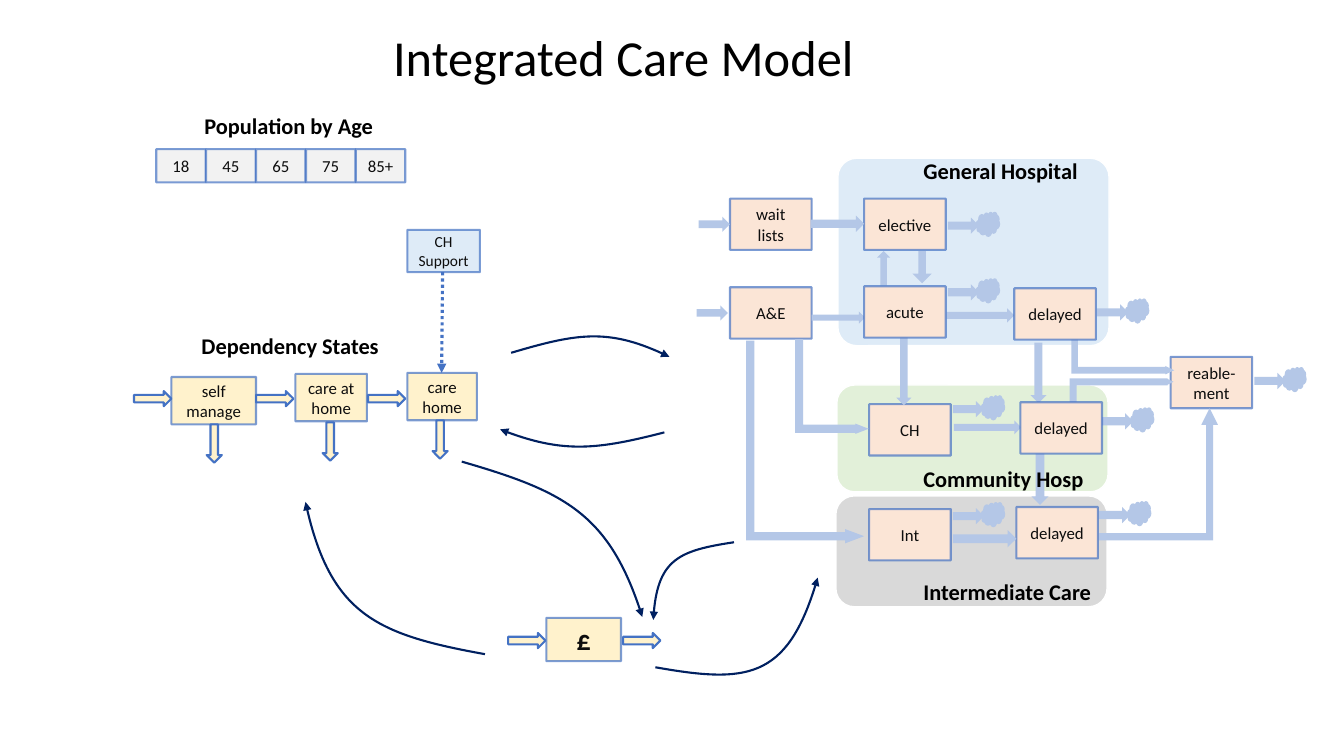
"""Build the Integrated Care Model slide."""
from dataclasses import dataclass
from typing import Optional

from lxml.etree import SubElement
from pptx import Presentation
from pptx.dml.color import RGBColor
from pptx.enum.dml import MSO_LINE
from pptx.enum.shapes import MSO_CONNECTOR, MSO_SHAPE as Geo
from pptx.enum.text import MSO_ANCHOR, MSO_AUTO_SIZE, PP_ALIGN
from pptx.oxml.ns import qn
from pptx.shapes.autoshape import Shape
from pptx.slide import Slide
from pptx.text.text import TextFrame
from pptx.util import Inches, Pt

WHITE = RGBColor(0xFF, 0xFF, 0xFF)
BLACK = RGBColor(0, 0, 0)
INK = RGBColor(0x0D, 0x0D, 0x0D)
BLUE = RGBColor(0x44, 0x72, 0xC4)
NAVY = RGBColor(0x00, 0x20, 0x60)
FLOW = RGBColor(0xB4, 0xC7, 0xE7)
CREAM = RGBColor(0xFF, 0xF2, 0xCC)
PEACH = RGBColor(0xFB, 0xE5, 0xD6)
SKY = RGBColor(0xDE, 0xEB, 0xF7)
GREEN = RGBColor(0xE2, 0xF0, 0xD9)
GREY = RGBColor(0xD9, 0xD9, 0xD9)
PALE = RGBColor(0xF2, 0xF2, 0xF2)
FONT = "Calibri"


@dataclass
class Box:
    text: str
    x: float
    y: float
    w: float = 0.81
    h: float = 0.51
    fill: RGBColor = PEACH
    size: int = 12
    bold: bool = False


@dataclass
class Block:
    geo: Geo
    x: float
    y: float
    w: float
    h: float
    fill: RGBColor = FLOW
    line: Optional[RGBColor] = None
    width: float = 1.5
    adj: tuple[float, ...] = ()
    rot: float = 0
    flip: bool = False


@dataclass
class Label:
    text: str
    x: float
    y: float
    w: float
    h: float = 0.37
    size: int = 16
    bold: bool = True
    wrap: bool = False


def yellow(geo: Geo, x: float, y: float) -> Block:
    w, h = (0.37, 0.15) if geo == Geo.RIGHT_ARROW else (0.15, 0.38)
    return Block(geo, x, y, w, h, CREAM, BLUE)


PANELS = [
    Block(Geo.ROUNDED_RECTANGLE, 8.29, 4.92, 2.69, 1.1, GREY, WHITE, 1),
    Block(Geo.ROUNDED_RECTANGLE, 8.3, 3.82, 2.69, 1.06, GREEN, WHITE, 1),
    Block(Geo.ROUNDED_RECTANGLE, 8.31, 1.57, 2.69, 1.86, SKY, WHITE, 1, (0.1,)),
]
BOXES = [
    Box("self manage", 1.7, 3.74, 0.84, 0.47, CREAM),
    Box("care at home", 2.93, 3.71, 0.71, 0.47, CREAM),
    Box("care home", 4.04, 3.7, 0.69, 0.47, CREAM),
    Box("A&E", 7.24, 2.85),
    Box("elective", 8.57, 1.97),
    Box("wait\nlists", 7.24, 1.97),
    Box("CH", 8.62, 4.01),
    Box("reable- ment", 11.61, 3.54),
    Box("Int", 8.62, 5.05),
    Box("delayed", 10.08, 5.03),
    Box("£", 5.42, 6.13, 0.74, 0.43, CREAM, 20, True),
    Box("CH\nSupport", 4.04, 2.28, 0.72, 0.42, SKY, 11),
] + [Box(age, 1.55 + 0.495 * i, 1.48, 0.49, 0.33, PALE)
     for i, age in enumerate(["18", "45", "65", "75", "85+"])]
ARROWS = [
    *[yellow(Geo.RIGHT_ARROW, x, 3.88) for x in (1.33, 2.54, 3.65)],
    *[yellow(Geo.RIGHT_ARROW, x, 6.28) for x in (5.04, 6.18)],
    *[yellow(Geo.DOWN_ARROW, x, y) for x, y in ((2.05, 4.21), (3.2, 4.19), (4.29, 4.17))],
    Block(Geo.RIGHT_ARROW, 6.93, 2.15, 0.31, 0.15),
    Block(Geo.RIGHT_ARROW, 6.91, 3.03, 0.31, 0.15),
    Block(Geo.RIGHT_ARROW, 8.04, 2.14, 0.53, 0.16),
    Block(Geo.RIGHT_ARROW, 8.05, 3.09, 0.53, 0.12),
    Block(Geo.RIGHT_ARROW, 9.39, 3.06, 0.67, 0.14),
    Block(Geo.RIGHT_ARROW, 9.46, 4.17, 0.67, 0.14),
    Block(Geo.RIGHT_ARROW, 9.45, 5.26, 0.63, 0.17),
    Block(Geo.DOWN_ARROW, 9.05, 2.49, 0.19, 0.32, adj=(0.39, 0.5)),
    Block(Geo.UP_ARROW, 8.7, 2.49, 0.13, 0.34),
    Block(Geo.DOWN_ARROW, 10.22, 3.4, 0.16, 0.6),
    Block(Geo.DOWN_ARROW, 10.23, 4.48, 0.17, 0.53),
    Block(Geo.DOWN_ARROW, 8.89, 3.33, 0.15, 0.69),
    Block(Geo.BENT_UP_ARROW, 7.78, 3.47, 0.94, 0.73, adj=(0.11, 0.07, 0.18), rot=90),
    Block(Geo.BENT_UP_ARROW, 6.98, 3.8, 2.01, 1.17, adj=(0.07, 0.06, 0.16), rot=90),
    Block(Geo.BENT_UP_ARROW, 10.96, 3.03, 0.35, 1.02, adj=(0.19, 0.12, 0.25), rot=90),
    Block(Geo.BENT_UP_ARROW, 11.01, 3.36, 0.23, 1.03, adj=(0.3, 0.12, 0.25), rot=90, flip=True),
    Block(Geo.BENT_UP_ARROW, 10.9, 4.05, 1.18, 1.31, adj=(0.06, 0.07, 0.14)),
]
EXITS = [(9.4, 2.82), (9.4, 2.16), (9.45, 3.98), (9.45, 5.04),
         (10.9, 5.03), (10.93, 4.1), (10.88, 3.02), (12.44, 3.7)]
FRONT_BOXES = [Box("acute", 8.57, 2.84), Box("delayed", 10.12, 3.99), Box("delayed", 10.06, 2.86)]
LABELS = [
    Label("Population by Age", 1.93, 1.06, 1.9),
    Label("General Hospital", 9.06, 1.51, 1.75),
    Label("Intermediate Care", 9.06, 5.69, 1.88),
    Label("Dependency States", 1.9, 3.25, 1.98),
    Label("Community Hosp", 9.06, 4.57, 1.81),
    Label("Integrated Care Model", 3.8, 0.21, 5.28, 0.71, 36, False, True),
]
CURVES = [
    [(6.59, 4.29), (5.93, 4.46), (5.57, 4.5), (4.96, 4.26)],
    [(5.07, 3.5), (5.71, 3.31), (6.05, 3.25), (6.64, 3.54)],
    [(4.58, 4.58), (5.58, 4.87), (6.05, 5.1), (6.37, 6.12)],
    [(4.81, 6.49), (3.76, 6.3), (3.27, 6.1), (3.03, 4.98)],
    [(6.5, 6.62), (7.4, 6.78), (7.82, 6.74), (8.11, 5.73)],
    [(7.28, 5.38), (6.75, 5.46), (6.51, 5.55), (6.48, 6.15)],
]


def write(tf: TextFrame, text: str, size: int, color: RGBColor, bold: bool, align: PP_ALIGN) -> None:
    tf.text = text
    for p in tf.paragraphs:
        p.alignment = align
        for r in p.runs:
            r.font.name, r.font.size, r.font.bold = FONT, Pt(size), bold
            r.font.color.rgb = color


def draw_block(shapes, b: Block) -> Shape:
    sp = shapes.add_shape(b.geo, Inches(b.x), Inches(b.y), Inches(b.w), Inches(b.h))
    sp.shadow.inherit = False
    sp.fill.solid()
    sp.fill.fore_color.rgb = b.fill
    if b.line is None:
        sp.line.fill.background()
    else:
        sp.line.color.rgb, sp.line.width = b.line, Pt(b.width)
    for i, value in enumerate(b.adj):
        sp.adjustments[i] = value
    sp.rotation = b.rot
    if b.flip:
        sp.element.spPr.find(qn("a:xfrm")).set("flipH", "1")
    return sp


def draw_box(s: Slide, b: Box) -> None:
    sp = draw_block(s.shapes, Block(Geo.RECTANGLE, b.x, b.y, b.w, b.h, b.fill, BLUE))
    clr = sp.element.spPr.find(f"{qn('a:ln')}//{qn('a:srgbClr')}")
    SubElement(clr, qn("a:alpha"), val="70000")
    sp.text_frame.word_wrap = True
    sp.text_frame.vertical_anchor = MSO_ANCHOR.MIDDLE
    write(sp.text_frame, b.text, b.size, INK, b.bold, PP_ALIGN.CENTER)


def draw_exit(s: Slide, x: float, y: float) -> None:
    shapes = s.shapes.add_group_shape().shapes
    draw_block(shapes, Block(Geo.RIGHT_ARROW, x, y, 0.31, 0.16))
    draw_block(shapes, Block(Geo.CLOUD, x + 0.28, y - 0.06, 0.24, 0.25))


def draw_label(s: Slide, b: Label) -> None:
    tf = s.shapes.add_textbox(Inches(b.x), Inches(b.y), Inches(b.w), Inches(b.h)).text_frame
    tf.word_wrap, tf.auto_size = b.wrap, MSO_AUTO_SIZE.SHAPE_TO_FIT_TEXT
    write(tf, b.text, b.size, BLACK, b.bold, PP_ALIGN.LEFT)


def add_head(sp) -> None:
    SubElement(sp.element.spPr.find(qn("a:ln")), qn("a:tailEnd"), type="triangle")


def draw_curve(s: Slide, points: list[tuple[float, float]]) -> None:
    start, *rest = [(Inches(x), Inches(y)) for x, y in points]
    builder = s.shapes.build_freeform(*start)
    builder.add_line_segments(rest, close=False)
    sp = builder.convert_to_shape()
    outline = sp.element.spPr.find(f".//{qn('a:path')}")
    segments = outline.findall(qn("a:lnTo"))
    bezier = SubElement(outline, qn("a:cubicBezTo"))
    for segment in segments:
        bezier.append(segment[0])
        outline.remove(segment)
    sp.shadow.inherit = False
    sp.fill.background()
    sp.line.color.rgb, sp.line.width = NAVY, Pt(1.5)
    add_head(sp)


def draw_support_link(s: Slide) -> None:
    link = s.shapes.add_connector(MSO_CONNECTOR.STRAIGHT, Inches(4.39), Inches(2.7), Inches(4.38), Inches(3.7))
    link.line.color.rgb, link.line.width = BLUE, Pt(2.25)
    link.line.dash_style = MSO_LINE.ROUND_DOT
    add_head(link)
    SubElement(link.element.spPr, qn("a:effectLst"))


def main() -> None:
    prs = Presentation()
    prs.slide_width, prs.slide_height = Inches(13.33), Inches(7.5)
    s = prs.slides.add_slide(prs.slide_layouts[6])
    for panel in PANELS:
        draw_block(s.shapes, panel)
    for box in BOXES:
        draw_box(s, box)
    for arrow in ARROWS:
        draw_block(s.shapes, arrow)
    draw_support_link(s)
    for x, y in EXITS:
        draw_exit(s, x, y)
    for box in FRONT_BOXES:
        draw_box(s, box)
    for label in LABELS:
        draw_label(s, label)
    for curve in CURVES:
        draw_curve(s, curve)
    prs.save("out.pptx")


if __name__ == "__main__":
    main()
